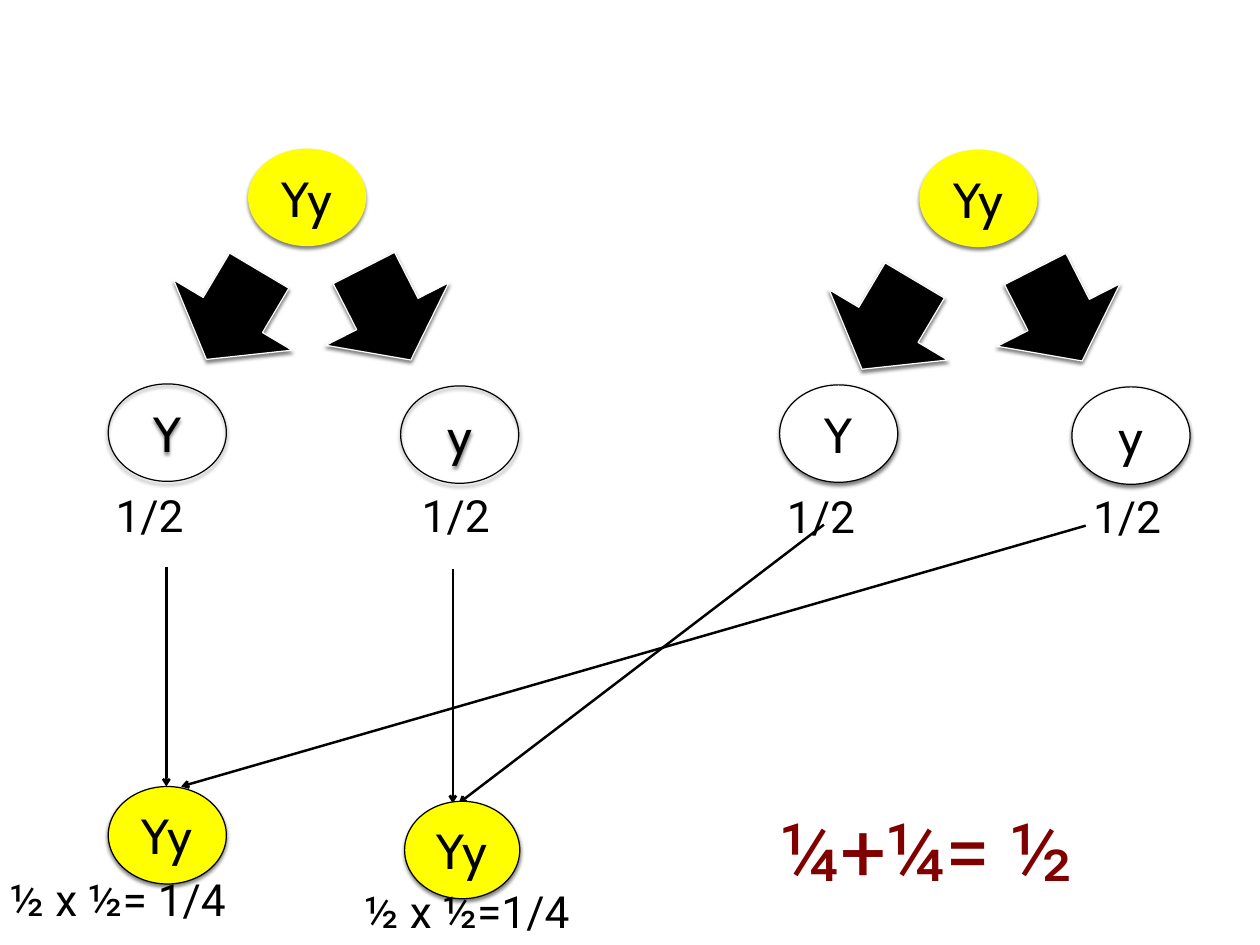
"""Draw a Yy x Yy cross: gametes, paired offspring and their odds."""
from pptx import Presentation
from pptx.dml.color import RGBColor
from pptx.enum.shapes import MSO_CONNECTOR as Link, MSO_SHAPE as Form
from pptx.enum.text import MSO_ANCHOR as Anchor, PP_ALIGN as Align
from pptx.oxml import parse_xml
from pptx.oxml.ns import nsdecls, qn
from pptx.util import Inches, Pt

BLACK = RGBColor(0, 0, 0)
WHITE = RGBColor(255, 255, 255)
YELLOW = RGBColor(255, 255, 0)
RED = RGBColor(128, 0, 0)

deck = Presentation()
deck.slide_width, deck.slide_height = Inches(14.22), Inches(10.67)
COL, ROW = deck.slide_width / 128, deck.slide_height / 96
slide = deck.slides.add_slide(deck.slide_layouts[6])
shapes = slide.shapes

SHADE = (f'<a:outerShdw {nsdecls("a")} blurRad="{Pt(3)}" dist="{Pt(2)}" dir="5400000" '
         'rotWithShape="0"><a:srgbClr val="000000"><a:alpha val="50000"/></a:srgbClr></a:outerShdw>')


def write(shape, text, size, font, color, align, wrap):
    frame = shape.text_frame
    look = {"word_wrap": wrap, "vertical_anchor": Anchor.MIDDLE}
    look |= {f"margin_{side}": Inches(0.06) for side in ("left", "top", "right", "bottom")}
    for name, value in look.items():
        setattr(frame, name, value)
    para = frame.paragraphs[0]
    para.alignment = align
    run = para.add_run()
    run.text = text
    for name, value in {"size": Pt(size), "name": font}.items():
        setattr(run.font, name, value)
    run.font.color.rgb = color


def draw(form, x, y, wide, high, fill, line, turn=0):
    shape = shapes.add_shape(form, int(x * COL), int(y * ROW), int(wide * COL), int(high * ROW))
    shape.rotation = turn
    if fill is None:
        shape.fill.background()
    else:
        shape.fill.solid()
        shape.fill.fore_color.rgb = fill
    if line is None:
        shape.line.fill.background()
    else:
        shape.line.color.rgb = line
        shape.line.width = Pt(1)
    shape.shadow.inherit = False
    shape._element.spPr.find(qn("a:effectLst")).append(parse_xml(SHADE))
    return shape


cells, odds = [], []
for dx, dy, fill, shift in ((0, 0, None, (0, 0)), (68.2, 0.1, WHITE, (-1.6, 0.9))):
    cells += [("Yy", 25.2 + dx, 15.1 + dy, 12, YELLOW, None),
              ("Y", 11 + dx, 39 + dy, 12, fill, BLACK),
              ("y", 40.7 + dx, 39.2 + dy, 12, fill, BLACK)]
    odds += [("1/2", x + dx, 49 + dy, 8.2, 6.5, 36, BLACK) for x in (11, 42.1)]
    draw(Form.RIGHT_ARROW, 34.1 + dx, 24.9 + dy, 10.5, 14, BLACK, WHITE, 63)
    draw(Form.RIGHT_ARROW, 18.4 + dx + shift[0], 25 + dy + shift[1], 10.5, 14, BLACK, WHITE, 120.7)

for x1, y1, x2, y2 in ((16.9, 57.6, 16.9, 79.9), (110.3, 53.4, 18.4, 79.9),
                       (46, 57.8, 46, 81.6), (83.7, 53.3, 46.6, 81.6)):
    link = shapes.add_connector(Link.STRAIGHT, int(x1 * COL), int(y1 * ROW),
                                int(x2 * COL), int(y2 * ROW))
    link.line.color.rgb = BLACK
    link.line.width = Pt(2)
    props = link._element.spPr
    props.find(qn("a:ln")).append(parse_xml(f'<a:tailEnd {nsdecls("a")} type="arrow"/>'))
    props.append(parse_xml(f'<a:effectLst {nsdecls("a")}/>'))

cells += [("Yy", 11, 79.9, 12, YELLOW, BLACK), ("Yy", 41.1, 81.4, 11.7, YELLOW, BLACK)]
for text, x, y, wide, fill, line in cells:
    cell = draw(Form.OVAL, x, y, wide, 9.9, fill, line)
    write(cell, text, 40, "Cabin", BLACK, Align.CENTER, True)

odds += [("½ x ½= 1/4", -0.8, 88.1, 24.3, 6.5, 36, BLACK),
         ("½ x ½=1/4", 34.1, 89.3, 24.3, 6.5, 36, BLACK),
         ("¼+¼= ½", 74.4, 80.8, 35.2, 11, 66, RED)]
for text, x, y, wide, high, size, color in odds:
    box = shapes.add_textbox(int(x * COL), int(y * ROW), int(wide * COL), int(high * ROW))
    write(box, text, size, "Roboto", color, Align.RIGHT, False)

deck.save("out.pptx")
